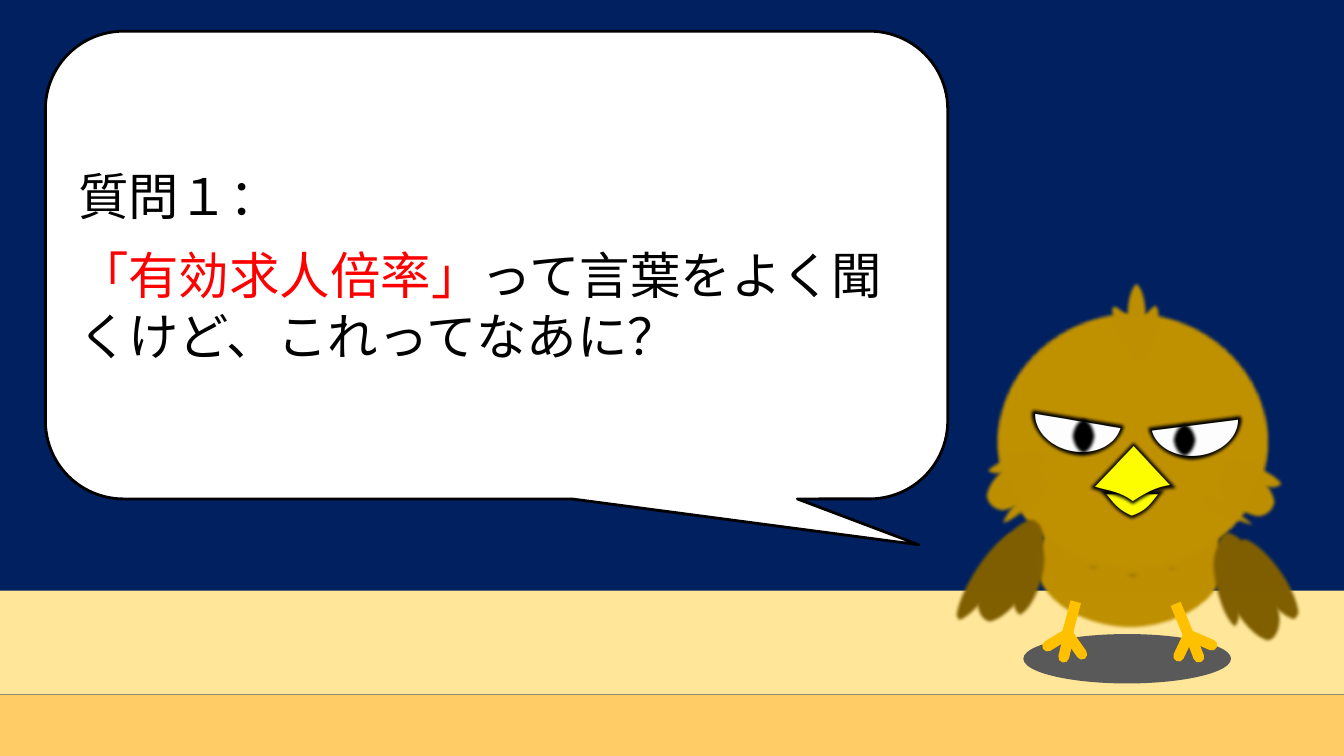
from dataclasses import dataclass
from typing import Optional

import pptx
import pptx.dml.color
import pptx.enum.shapes
import pptx.enum.text
import pptx.oxml.ns
import pptx.util
from lxml import etree

Inches = pptx.util.Inches
Pt = pptx.util.Pt
Kind = pptx.enum.shapes.MSO_SHAPE
qn = pptx.oxml.ns.qn

FONT = "Noto Sans CJK JP"
BROWN, DARK_BROWN, LEG = "BF9000", "806000", "FFC000"
YELLOW, BLACK, WHITE, RED = "FFFF00", "000000", "FFFFFF", "FF0000"
SOFT_EDGE = Pt(2.5)
Point = tuple[float, float]


@dataclass
class Part:
    left: float
    top: float
    width: float
    height: float
    fill: str
    rotation: float = 0
    kind: Kind = Kind.OVAL
    adjustments: tuple[float, ...] = ()
    outline: Optional[float] = None


@dataclass
class Bone:
    start: Point
    end: Point
    cap: str = "rnd"


@dataclass
class Outline:
    """Start point followed by lines (one point) and cubic curves (three points)."""
    start: Point
    segments: list[tuple[Point, ...]]


def rgb(colour: str) -> pptx.dml.color.RGBColor:
    return pptx.dml.color.RGBColor.from_string(colour)


def paint(shape, fill: str, outline: Optional[float]) -> None:
    shape.shadow.inherit = False
    shape.fill.solid()
    shape.fill.fore_color.rgb = rgb(fill)
    if outline is None:
        shape.line.fill.background()
    else:
        shape.line.color.rgb = rgb(BLACK)
        shape.line.width = Pt(outline)


def soften(shape) -> None:
    effects = shape._element.spPr.find(qn("a:effectLst"))
    etree.SubElement(effects, qn("a:softEdge"), rad=str(int(SOFT_EDGE)))


def draw_part(shapes, part: Part):
    shape = shapes.add_shape(part.kind, Inches(part.left), Inches(part.top),
                             Inches(part.width), Inches(part.height))
    shape.rotation = part.rotation
    for index, value in enumerate(part.adjustments):
        shape.adjustments[index] = value
    paint(shape, part.fill, part.outline)
    return shape


def draw_bone(shapes, bone: Bone) -> None:
    line = shapes.add_connector(pptx.enum.shapes.MSO_CONNECTOR.STRAIGHT,
                                *map(Inches, bone.start + bone.end))
    line.line.color.rgb = rgb(LEG)
    line.line.width = Pt(7.75)
    properties = line._element.spPr
    properties.find(qn("a:ln")).set("cap", bone.cap)
    etree.SubElement(properties, qn("a:effectLst"))


def curve(points: tuple[Point, ...], steps: int = 12) -> list[Point]:
    def at(t: float, axis: int) -> float:
        weights = ((1 - t) ** 3, 3 * t * (1 - t) ** 2, 3 * t * t * (1 - t), t ** 3)
        return sum(w * p[axis] for w, p in zip(weights, points))
    return [(at(i / steps, 0), at(i / steps, 1)) for i in range(1, steps + 1)]


def draw_outline(shapes, outline: Outline, fill: str):
    points = [outline.start]
    for segment in outline.segments:
        points += segment if len(segment) == 1 else curve((points[-1], *segment))
    corners = [(Inches(x), Inches(y)) for x, y in points]
    builder = shapes.build_freeform(*corners[0])
    builder.add_line_segments(corners[1:], close=True)
    shape = builder.convert_to_shape()
    paint(shape, fill, 5)
    return shape


def write(paragraph, runs: list[tuple[str, str]]) -> None:
    paragraph.alignment = pptx.enum.text.PP_ALIGN.LEFT
    paragraph.line_spacing = Pt(44)
    paragraph.font.size = Pt(36)
    paragraph.font.name = FONT
    etree.SubElement(paragraph.font._element, qn("a:ea"), typeface=FONT)
    for text, colour in runs:
        run = paragraph.add_run()
        run.text = text
        run.font.color.rgb = rgb(colour)


SCENERY = [
    Part(-0.1, 5.86, 13.61, 1.03, "FFE699", kind=Kind.RECTANGLE),
    Part(-0.12, 6.89, 13.65, 0.61, "FFCC66", kind=Kind.RECTANGLE),
    Part(10.15, 6.29, 2.06, 0.49, "595959"),
]
BUBBLE = Part(0.45, 0.31, 8.95, 4.64, WHITE, kind=Kind.ROUNDED_RECTANGULAR_CALLOUT,
              adjustments=(0.468, 0.598, 0.167), outline=2)
TRUNK = [Part(10.24, 4.92, 1.93, 1.33, BROWN), Part(9.86, 3.08, 2.74, 2.6, BROWN)]
LEGS = [
    Bone((10.67, 5.97), (10.58, 6.31), "flat"),
    Bone((10.57, 6.3), (10.39, 6.41)),
    Bone((10.6, 6.3), (10.55, 6.52)),
    Bone((10.59, 6.29), (10.73, 6.49)),
    Bone((11.66, 5.99), (11.8, 6.33), "flat"),
    Bone((11.78, 6.32), (11.69, 6.51)),
    Bone((11.81, 6.31), (11.89, 6.52)),
    Bone((11.79, 6.3), (12.02, 6.4)),
]
CHEEKS = [
    Part(9.82, 4.49, 0.45, 0.66, BROWN, 231.7),
    Part(10.06, 4.65, 0.2, 0.66, BROWN, 226.1),
    Part(9.97, 4.27, 0.21, 0.66, BROWN, 255.4),
    Part(12.31, 4.38, 0.24, 0.66, BROWN, 108.6),
    Part(12.11, 4.75, 0.15, 0.66, BROWN, 116),
    Part(12.15, 4.55, 0.45, 0.66, BROWN, 127.9),
]
BEAK = [
    Outline((11.56, 4.87), [((11.45, 4.96), (11.44, 5.08), (11.22, 5.15)),
                            ((11.02, 5.07), (11, 4.96), (10.89, 4.87))]),
    Outline((10.8, 4.84), [((11.24, 4.38),), ((11.67, 4.84),),
                           ((11.52, 4.84), (11.39, 4.9), (11.23, 5.01)),
                           ((11.09, 4.89), (10.94, 4.9), (10.8, 4.84))]),
]
WINGS = [
    Part(9.76, 5.08, 0.53, 1.17, DARK_BROWN, 26.9),
    Part(9.62, 5.17, 0.32, 1.09, DARK_BROWN, 32.2),
    Part(10.04, 5.32, 0.32, 0.83, DARK_BROWN, 14),
    Part(12.12, 5.21, 0.52, 1.22, DARK_BROWN, 336.1),
    Part(12.03, 5.39, 0.27, 0.87, DARK_BROWN, 347.5),
    Part(12.41, 5.24, 0.36, 1.01, DARK_BROWN, 325.3),
]
EYES = [Part(left, top, 0.73, 0.92, WHITE, turn, Kind.CHORD, (53.36, 162), 5)
        for left, top, turn in ((10.33, 3.69, 280), (11.48, 3.73, 263.3))]
PUPILS = [Part(10.61, 4.12, 0.28, 0.41, BLACK), Part(11.61, 4.17, 0.28, 0.39, BLACK)]
CREST = [Part(left, top, 0.24, 0.64, BROWN, turn) for left, top, turn in
         ((11.15, 2.77, 0), (11.08, 2.96, 326.5), (11.24, 2.97, 21.4))]
CHEST = [Part(left, top, 0.16, 0.4, DARK_BROWN, turn, Kind.MOON, (0.52,))
         for left, top, turn in ((10.73, 5.39, 280), (11.58, 5.4, 257.8), (11.15, 5.47, 270))]


def main() -> None:
    deck = pptx.Presentation()
    deck.slide_width, deck.slide_height = Inches(13.33), Inches(7.5)
    slide = deck.slides.add_slide(deck.slide_layouts[6])
    slide.background.fill.solid()
    slide.background.fill.fore_color.rgb = rgb("002060")

    # Floor and ground shadow
    for part in SCENERY:
        draw_part(slide.shapes, part)

    # Speech bubble
    speech = draw_part(slide.shapes, BUBBLE).text_frame
    speech.word_wrap = True
    speech.vertical_anchor = pptx.enum.text.MSO_ANCHOR.MIDDLE
    write(speech.paragraphs[0], [("質問１：", BLACK)])
    question = speech.add_paragraph()
    question.space_before = Pt(12)
    write(question, [("「有効求人倍率」", RED),
                     ("って言葉をよく聞くけど、これってなあに？", BLACK)])

    # Bird, from back to front
    bird = slide.shapes.add_group_shape().shapes
    for part in TRUNK:
        soften(draw_part(bird, part))
    for bone in LEGS:
        draw_bone(bird, bone)
    for part in CHEEKS:
        soften(draw_part(bird, part))
    for half in BEAK:
        soften(draw_outline(bird, half, YELLOW))
    for part in WINGS + EYES + PUPILS + CREST + CHEST:
        soften(draw_part(bird, part))

    deck.save("out.pptx")


if __name__ == "__main__":
    main()
